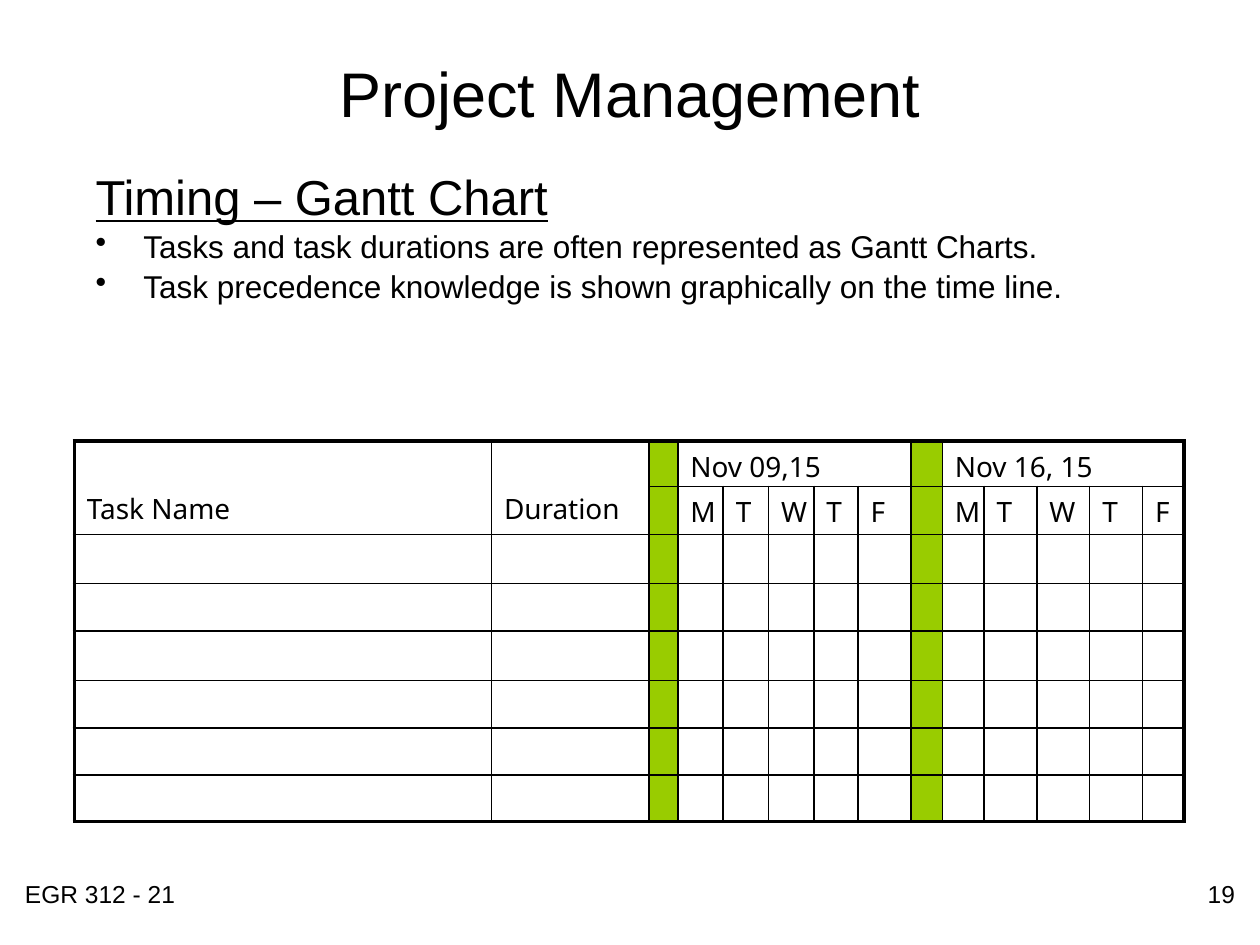
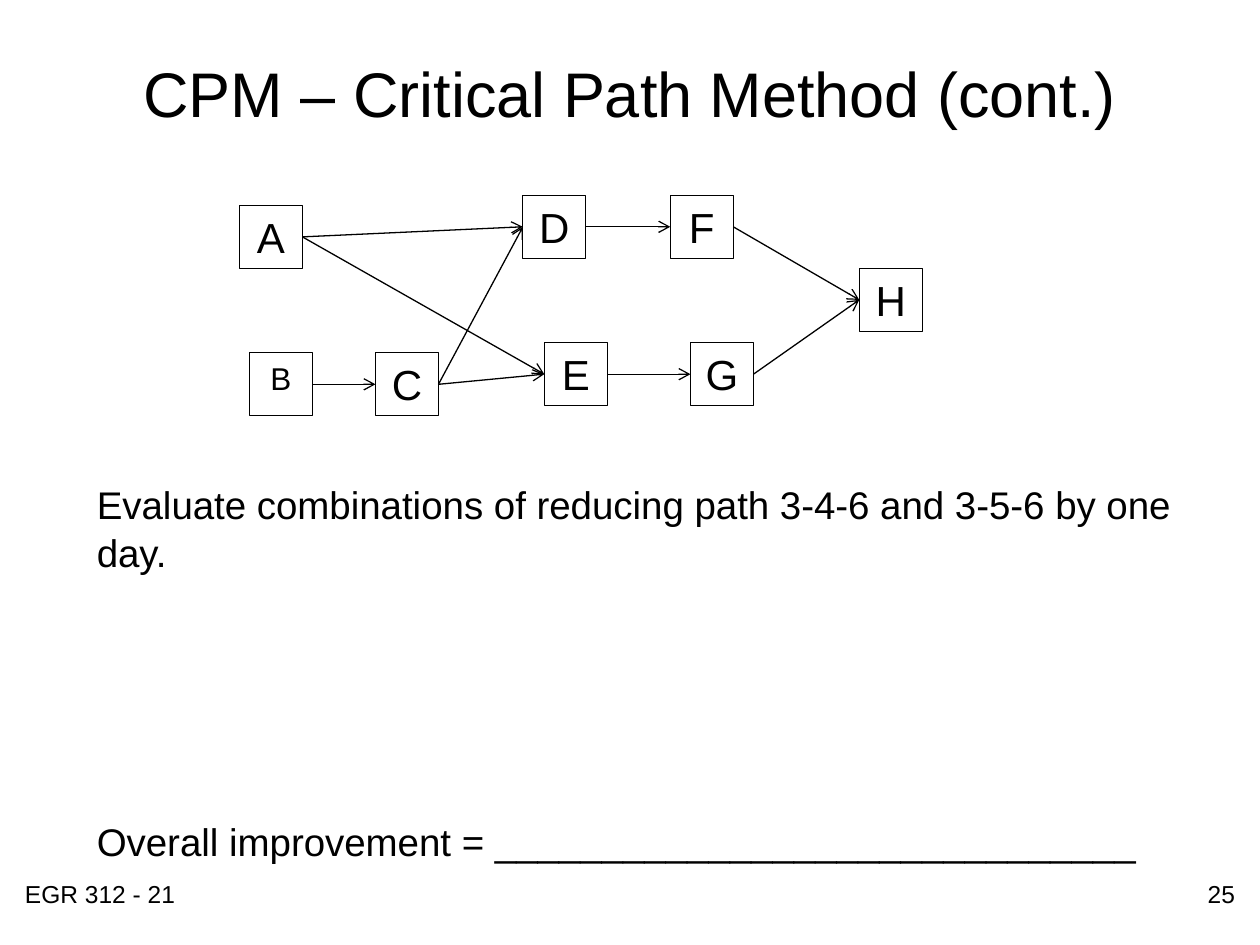
from lxml.etree import SubElement
from pptx import Presentation
from pptx.dml.color import RGBColor
from pptx.enum.shapes import MSO_CONNECTOR, MSO_SHAPE
from pptx.enum.text import MSO_ANCHOR, PP_ALIGN
from pptx.oxml.ns import qn
from pptx.util import Inches, Pt

BLACK = RGBColor(0x00, 0x00, 0x00)
WEEKEND_GREEN = RGBColor(0x99, 0xCC, 0x00)
TEXT_FONT = "Arial"
TABLE_FONT = "Noto Sans"

COURSE = "EGR 312 - 21"

GANTT_TITLE = "Project Management"
GANTT_NUMBER = "19"
GANTT_HEADING = "Timing – Gantt Chart"
GANTT_POINTS = [
    "Tasks and task durations are often represented as Gantt Charts.",
    "Task precedence knowledge is shown graphically on the time line.",
]
TASK_HEADINGS = ["Task Name", "Duration"]
WEEKS = [(3, "Nov 09,15"), (9, "Nov 16, 15")]
WEEKEND_COLUMNS = [2, 8]
DAYS = "MTWTF"
COLUMN_WIDTHS = [3.31, 1.25, 0.23, 0.36, 0.36, 0.36, 0.35, 0.42,
                 0.25, 0.33, 0.42, 0.42, 0.42, 0.33]
ROW_HEIGHTS = [0.36, 0.38, 0.39, 0.38, 0.39, 0.38, 0.37, 0.37]

CPM_TITLE = "CPM – Critical Path Method (cont.)"
CPM_NUMBER = "25"
CPM_QUESTION = "Evaluate combinations of reducing path 3-4-6 and 3-5-6 by one day."
CPM_ANSWER = "Overall improvement = " + "_" * 30
TASK_SIZE = 0.5
TASKS = {
    "A": (1.9, 1.63, 24),
    "B": (1.98, 2.8, 18),
    "C": (2.98, 2.8, 24),
    "D": (4.15, 1.55, 24),
    "E": (4.32, 2.72, 24),
    "F": (5.32, 1.55, 24),
    "G": (5.48, 2.72, 24),
    "H": (6.82, 2.13, 24),
}
PRECEDENCES = ["FH", "GH", "DF", "EG", "AD", "BC", "CE", "AE", "CD"]


def style_paragraph(para, size, font=TEXT_FONT, align=PP_ALIGN.LEFT):
    para.alignment = align
    for span in para.runs:
        span.font.size = Pt(size)
        span.font.name = font
        span.font.color.rgb = BLACK


def add_text(page, place, lines, size, align=PP_ALIGN.LEFT, anchor=MSO_ANCHOR.TOP):
    box = page.shapes.add_textbox(*map(Inches, place))
    frame = box.text_frame
    frame.word_wrap = True
    frame.vertical_anchor = anchor
    frame.text = "\n".join(lines)
    for para in frame.paragraphs:
        style_paragraph(para, size, align=align)
    return frame.paragraphs


def add_page(deck, title, number):
    page = deck.slides.add_slide(deck.slide_layouts[6])
    add_text(page, (0.1, 6.93, 2.33, 0.52), [COURSE], 14)
    add_text(page, (7.57, 6.93, 2.33, 0.52), [number], 14, PP_ALIGN.RIGHT)
    add_text(page, (0.75, 0.22, 8.5, 1.03), [title], 36, PP_ALIGN.CENTER, MSO_ANCHOR.MIDDLE)
    return page


def add_bullet(para):
    properties = para._p.get_or_add_pPr()
    properties.set("marL", str(Inches(0.38)))
    properties.set("indent", str(-Inches(0.38)))
    SubElement(properties, qn("a:buChar")).set("char", "•")


def set_borders(cell, widths):
    properties = cell._tc.get_or_add_tcPr()
    for position, (side, width) in enumerate(widths.items()):
        line = SubElement(properties, qn(f"a:ln{side}"))
        line.set("w", str(Pt(width)))
        fill = SubElement(line, qn("a:solidFill"))
        SubElement(fill, qn("a:srgbClr")).set("val", str(BLACK))
        properties.insert(position, line)


def write_cell(cell, text, bottom=False):
    cell.text = text
    style_paragraph(cell.text_frame.paragraphs[0], 16, TABLE_FONT)
    if bottom:
        cell.vertical_anchor = MSO_ANCHOR.BOTTOM
        cell.margin_bottom = Inches(0.05)


def add_gantt_table(page):
    row_count, column_count = len(ROW_HEIGHTS), len(COLUMN_WIDTHS)
    table = page.shapes.add_table(
        row_count, column_count, Inches(0.59), Inches(3.5),
        Inches(sum(COLUMN_WIDTHS)), Inches(sum(ROW_HEIGHTS))).table
    table.first_row = False
    table.horz_banding = False
    for column, width in zip(table.columns, COLUMN_WIDTHS):
        column.width = Inches(width)
    for row, height in zip(table.rows, ROW_HEIGHTS):
        row.height = Inches(height)

    for column in range(len(TASK_HEADINGS)):
        table.cell(0, column).merge(table.cell(1, column))
    for first, _ in WEEKS:
        table.cell(0, first).merge(table.cell(0, first + len(DAYS) - 1))

    for row in range(row_count):
        for column in range(column_count):
            cell = table.cell(row, column)
            cell.margin_top = Inches(0.05)
            cell.margin_bottom = Inches(0.01)
            cell.margin_right = 0
            if column in WEEKEND_COLUMNS:
                cell.fill.solid()
                cell.fill.fore_color.rgb = WEEKEND_GREEN
            else:
                cell.fill.background()
            last_column = column + (cell.span_width if cell.is_merge_origin else 1)
            outer = {
                "L": column == 0,
                "R": last_column == column_count,
                "T": row == 0,
                "B": row == row_count - 1,
            }
            set_borders(cell, {side: 2.25 if edge else 1 for side, edge in outer.items()})

    for column, heading in enumerate(TASK_HEADINGS):
        write_cell(table.cell(0, column), heading, bottom=True)
    for first, week in WEEKS:
        write_cell(table.cell(0, first), week)
        for offset, day in enumerate(DAYS):
            write_cell(table.cell(1, first + offset), day)


def add_task(page, name, left, top, size):
    box = page.shapes.add_shape(
        MSO_SHAPE.RECTANGLE, Inches(left), Inches(top), Inches(TASK_SIZE), Inches(TASK_SIZE))
    box.shadow.inherit = False
    box.fill.background()
    box.line.color.rgb = BLACK
    box.line.width = Pt(0.75)
    box.text_frame.text = name
    box.text_frame.vertical_anchor = MSO_ANCHOR.TOP
    para = box.text_frame.paragraphs[0]
    para.space_before = Pt(size / 8)
    style_paragraph(para, size, align=PP_ALIGN.CENTER)
    return box


def add_arrow(page, start, end):
    arrow = page.shapes.add_connector(MSO_CONNECTOR.STRAIGHT, 0, 0, 0, 0)
    arrow.begin_connect(start, 3)
    arrow.end_connect(end, 1)
    arrow.line.color.rgb = BLACK
    arrow.line.width = Pt(0.75)
    properties = arrow._element.spPr
    SubElement(properties.find(qn("a:ln")), qn("a:tailEnd")).set("type", "arrow")
    SubElement(properties, qn("a:effectLst"))


def build_gantt_page(deck):
    page = add_page(deck, GANTT_TITLE, GANTT_NUMBER)
    heading, *points = add_text(
        page, (0.66, 1.25, 8.68, 2.16), [GANTT_HEADING, *GANTT_POINTS], 18)
    heading.runs[0].font.size = Pt(28)
    heading.runs[0].font.underline = True
    for para in (heading, *points):
        para.line_spacing = 1.05
    for para in points:
        add_bullet(para)
    add_gantt_table(page)


def build_cpm_page(deck):
    page = add_page(deck, CPM_TITLE, CPM_NUMBER)
    question, answer = add_text(
        page, (0.67, 3.75, 9.17, 3.21), [CPM_QUESTION, CPM_ANSWER], 22)
    question.line_spacing = answer.line_spacing = 1.05
    answer.space_before = Pt(137)
    boxes = {name: add_task(page, name, *place) for name, place in TASKS.items()}
    for start, end in PRECEDENCES:
        add_arrow(page, boxes[start], boxes[end])


def main():
    deck = Presentation()
    deck.slide_width = Inches(10)
    deck.slide_height = Inches(7.5)
    build_gantt_page(deck)
    build_cpm_page(deck)
    deck.save("out.pptx")


if __name__ == "__main__":
    main()
